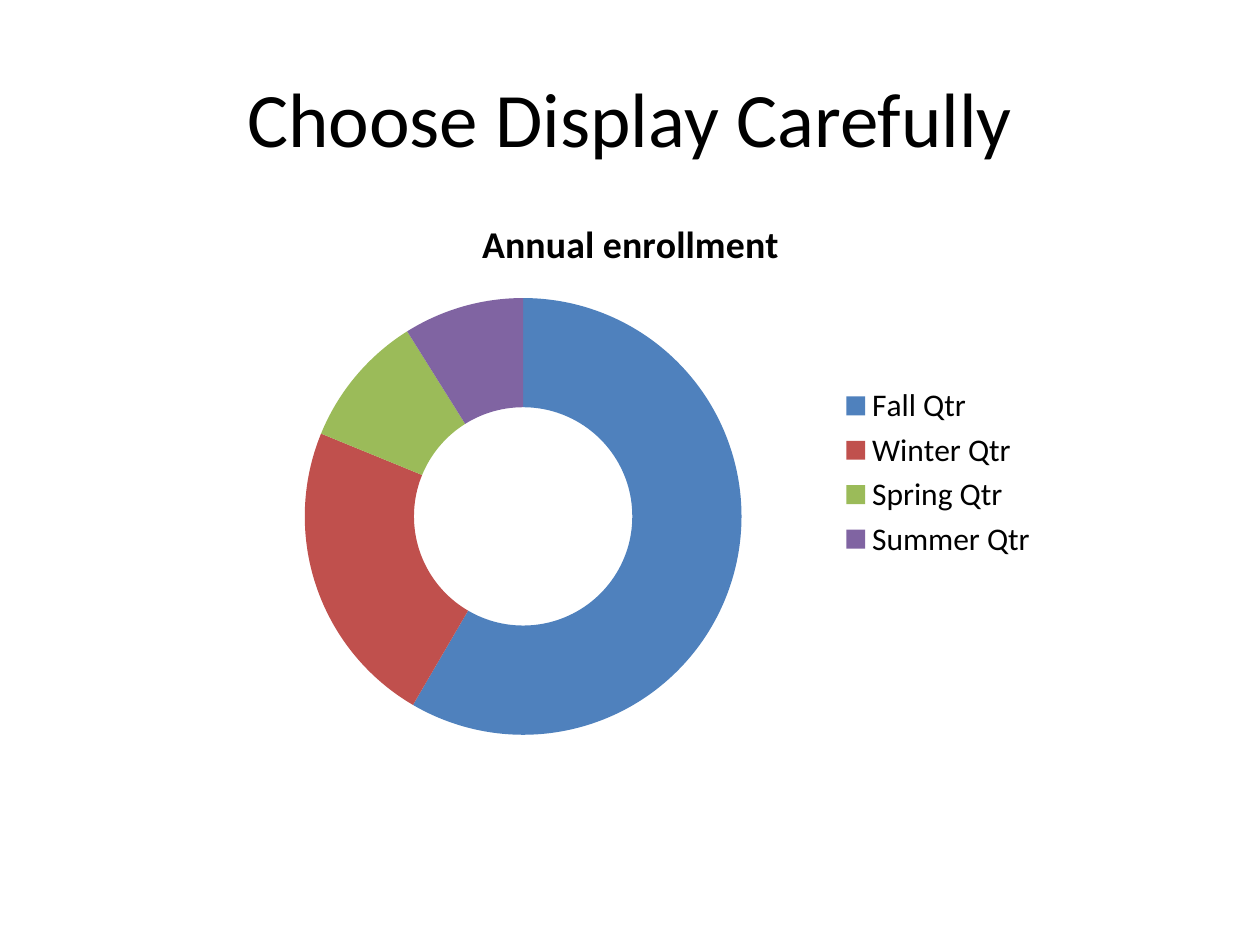
from dataclasses import dataclass

from pptx import Presentation
from pptx.chart.data import CategoryChartData
from pptx.dml.color import RGBColor
from pptx.enum.chart import XL_CHART_TYPE, XL_LEGEND_POSITION
from pptx.enum.text import MSO_ANCHOR, PP_ALIGN
from pptx.util import Inches, Pt

DOUGHNUT = XL_CHART_TYPE.DOUGHNUT
RIGHT = XL_LEGEND_POSITION.RIGHT
MIDDLE = MSO_ANCHOR.MIDDLE
CENTER = PP_ALIGN.CENTER


@dataclass(frozen=True)
class Theme:
    font: str = "Calibri"
    text: str = "000000"
    quarters: tuple = ("4F81BD", "C0504D", "9BBB59", "8064A2")
    title_size: float = 44
    chart_title_size: float = 21.6
    chart_size: float = 18


THEME = Theme()
ENROLLMENT = {"Fall Qtr": 59, "Winter Qtr": 23, "Spring Qtr": 10, "Summer Qtr": 9}


def set_font(font, size, bold=False):
    font.name = THEME.font
    font.size = Pt(size)
    font.bold = bold
    font.color.rgb = RGBColor.from_string(THEME.text)


def add_title(slide, text, left, top, width, height):
    sp = slide.shapes.add_textbox(Inches(left), Inches(top), Inches(width), Inches(height))
    tf = sp.text_frame
    tf.word_wrap = True
    tf.vertical_anchor = MIDDLE
    p = tf.paragraphs[0]
    p.text = text
    p.alignment = CENTER
    set_font(p.font, THEME.title_size)


def add_doughnut(slide, title, values, left, top, width, height):
    data = CategoryChartData()
    data.categories = list(values)
    data.add_series(title, list(values.values()))
    frame = slide.shapes.add_chart(
        DOUGHNUT, Inches(left), Inches(top), Inches(width), Inches(height), data
    )
    chart = frame.chart
    set_font(chart.font, THEME.chart_size)

    chart.has_title = True
    p = chart.chart_title.text_frame.paragraphs[0]
    p.text = title
    set_font(p.font, THEME.chart_title_size, bold=True)
    chart.chart_title.include_in_layout = False

    chart.has_legend = True
    chart.legend.position = RIGHT
    chart.legend.include_in_layout = False

    plot = chart.plots[0]
    plot.vary_by_categories = True
    for i, color in enumerate(THEME.quarters):
        fill = plot.series[0].points[i].format.fill
        fill.solid()
        fill.fore_color.rgb = RGBColor.from_string(color)


def main():
    prs = Presentation()
    prs.slide_width = Inches(10)
    prs.slide_height = Inches(7.5)
    slide = prs.slides.add_slide(prs.slide_layouts[6])
    add_title(slide, "Choose Display Carefully", 0.5, 0.3, 9, 1.25)
    add_doughnut(slide, "Annual enrollment", ENROLLMENT, 1.67, 1.53, 6.67, 4.44)
    prs.save("out.pptx")


if __name__ == "__main__":
    main()
